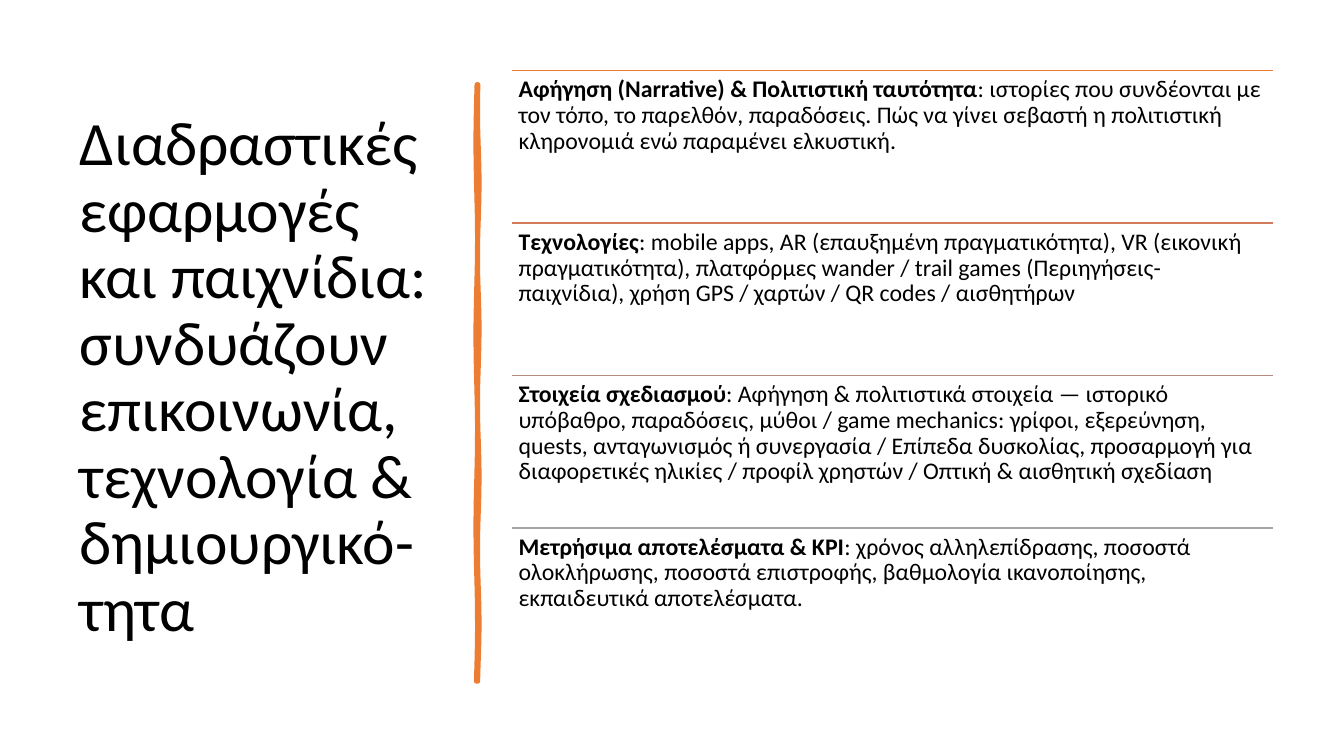
from dataclasses import dataclass
from math import sin

from lxml import etree
from pptx import Presentation
from pptx.dml.color import RGBColor
from pptx.enum.shapes import MSO_CONNECTOR
from pptx.enum.text import MSO_ANCHOR, MSO_AUTO_SIZE, PP_ALIGN
from pptx.oxml.ns import qn
from pptx.slide import Slide
from pptx.util import Cm, Pt

STRAIGHT = MSO_CONNECTOR.STRAIGHT
LEFT = PP_ALIGN.LEFT
MIDDLE = MSO_ANCHOR.MIDDLE
TOP = MSO_ANCHOR.TOP
NO_AUTOFIT = MSO_AUTO_SIZE.NONE

BLACK = RGBColor(0x00, 0x00, 0x00)
ORANGE = RGBColor(0xED, 0x7D, 0x31)
COPPER = RGBColor(0xD1, 0x7B, 0x5C)
DUSTY_ROSE = RGBColor(0xB9, 0x8A, 0x82)
GRAY = RGBColor(0xA5, 0xA5, 0xA5)

FONT = "Calibri"
TOPICS_LEFT, TOPICS_TOP = 12.9, 1.78
TOPIC_WIDTH, TOPIC_HEIGHT = 19.18, 3.84
INSET = Cm(0.17)

TITLE = (
    "Διαδραστικές εφαρμογές και παιχνίδια: συνδυάζουν επικοινωνία, "
    "τεχνολογία & δημιουργικό-τητα"
)
TITLE_PLACE = {"left": Cm(1.75), "top": Cm(1.78), "width": Cm(9.5), "height": Cm(15.52)}
TITLE_FRAME = {"word_wrap": True, "auto_size": NO_AUTOFIT, "vertical_anchor": MIDDLE}
TOPIC_FRAME = {
    "word_wrap": True,
    "auto_size": NO_AUTOFIT,
    "vertical_anchor": TOP,
    "margin_left": INSET,
    "margin_top": INSET,
    "margin_right": INSET,
    "margin_bottom": INSET,
}
PARAGRAPH = {"alignment": LEFT, "line_spacing": 0.9}


@dataclass(frozen=True)
class Topic:
    heading: str
    details: str
    rule_color: RGBColor


TOPICS = [
    Topic(
        "Αφήγηση (Narrative) & Πολιτιστική ταυτότητα",
        ": ιστορίες που συνδέονται με τον τόπο, το παρελθόν, παραδόσεις. "
        "Πώς να γίνει σεβαστή η πολιτιστική κληρονομιά ενώ παραμένει ελκυστική.",
        ORANGE,
    ),
    Topic(
        "Τεχνολογίες",
        ": mobile apps, AR (επαυξημένη πραγματικότητα), VR (εικονική πραγματικότητα), "
        "πλατφόρμες wander / trail games (Περιηγήσεις-παιχνίδια), "
        "χρήση GPS / χαρτών / QR codes / αισθητήρων",
        COPPER,
    ),
    Topic(
        "Στοιχεία σχεδιασμού",
        ": Αφήγηση & πολιτιστικά στοιχεία — ιστορικό υπόβαθρο, παραδόσεις, μύθοι / "
        "game mechanics: γρίφοι, εξερεύνηση, quests, ανταγωνισμός ή συνεργασία / "
        "Επίπεδα δυσκολίας, προσαρμογή για διαφορετικές ηλικίες / προφίλ χρηστών / "
        "Οπτική & αισθητική σχεδίαση",
        DUSTY_ROSE,
    ),
    Topic(
        "Μετρήσιμα αποτελέσματα & KPI",
        ": χρόνος αλληλεπίδρασης, ποσοστά ολοκλήρωσης, ποσοστά επιστροφής, "
        "βαθμολογία ικανοποίησης, εκπαιδευτικά αποτελέσματα.",
        GRAY,
    ),
]


def apply(target: object, values: dict) -> None:
    for attribute, value in values.items():
        setattr(target, attribute, value)


def add_run(paragraph, text: str, size: int, bold: bool) -> None:
    run = paragraph.add_run()
    run.text = text
    apply(run.font, {"name": FONT, "size": Pt(size), "bold": bold})
    run.font.color.rgb = BLACK


def write_title(slide: Slide) -> None:
    title = slide.shapes.title
    apply(title, TITLE_PLACE)
    apply(title.text_frame, TITLE_FRAME)
    paragraph = title.text_frame.paragraphs[0]
    apply(paragraph, PARAGRAPH)
    add_run(paragraph, TITLE, 44, False)


def draw_brush_stroke(slide: Slide) -> None:
    top, height, steps = 2.13, 15.04, 60
    heights = [top + height * step / steps for step in range(steps + 1)]
    right_edge = [(Cm(12.06 + 0.02 * sin(1.7 * y)), Cm(y)) for y in heights]
    left_edge = [(Cm(12.01 + 0.02 * sin(1.3 * y)), Cm(y)) for y in reversed(heights)]
    start, *outline = right_edge + left_edge
    builder = slide.shapes.build_freeform(*start)
    builder.add_line_segments(outline, close=True)
    stroke = builder.convert_to_shape()
    stroke.shadow.inherit = False
    stroke.fill.solid()
    stroke.fill.fore_color.rgb = ORANGE
    stroke.line.color.rgb = ORANGE
    stroke.line.width = Pt(3.25)


def draw_topic(slide: Slide, topic: Topic, top: float) -> None:
    left, right = Cm(TOPICS_LEFT), Cm(TOPICS_LEFT + TOPIC_WIDTH)
    rule = slide.shapes.add_connector(STRAIGHT, left, Cm(top), right, Cm(top))
    rule.line.color.rgb = topic.rule_color
    rule.line.width = Pt(1)
    etree.SubElement(rule._element.spPr, qn("a:effectLst"))

    box = slide.shapes.add_textbox(left, Cm(top), Cm(TOPIC_WIDTH), Cm(TOPIC_HEIGHT))
    apply(box.text_frame, TOPIC_FRAME)
    paragraph = box.text_frame.paragraphs[0]
    apply(paragraph, PARAGRAPH)
    add_run(paragraph, topic.heading, 17, True)
    add_run(paragraph, topic.details, 17, False)


def main() -> None:
    presentation = Presentation()
    apply(presentation, {"slide_width": Cm(33.87), "slide_height": Cm(19.05)})
    slide = presentation.slides.add_slide(presentation.slide_layouts[5])
    write_title(slide)
    draw_brush_stroke(slide)
    for row, topic in enumerate(TOPICS):
        draw_topic(slide, topic, TOPICS_TOP + row * TOPIC_HEIGHT)
    presentation.save("out.pptx")


if __name__ == "__main__":
    main()
